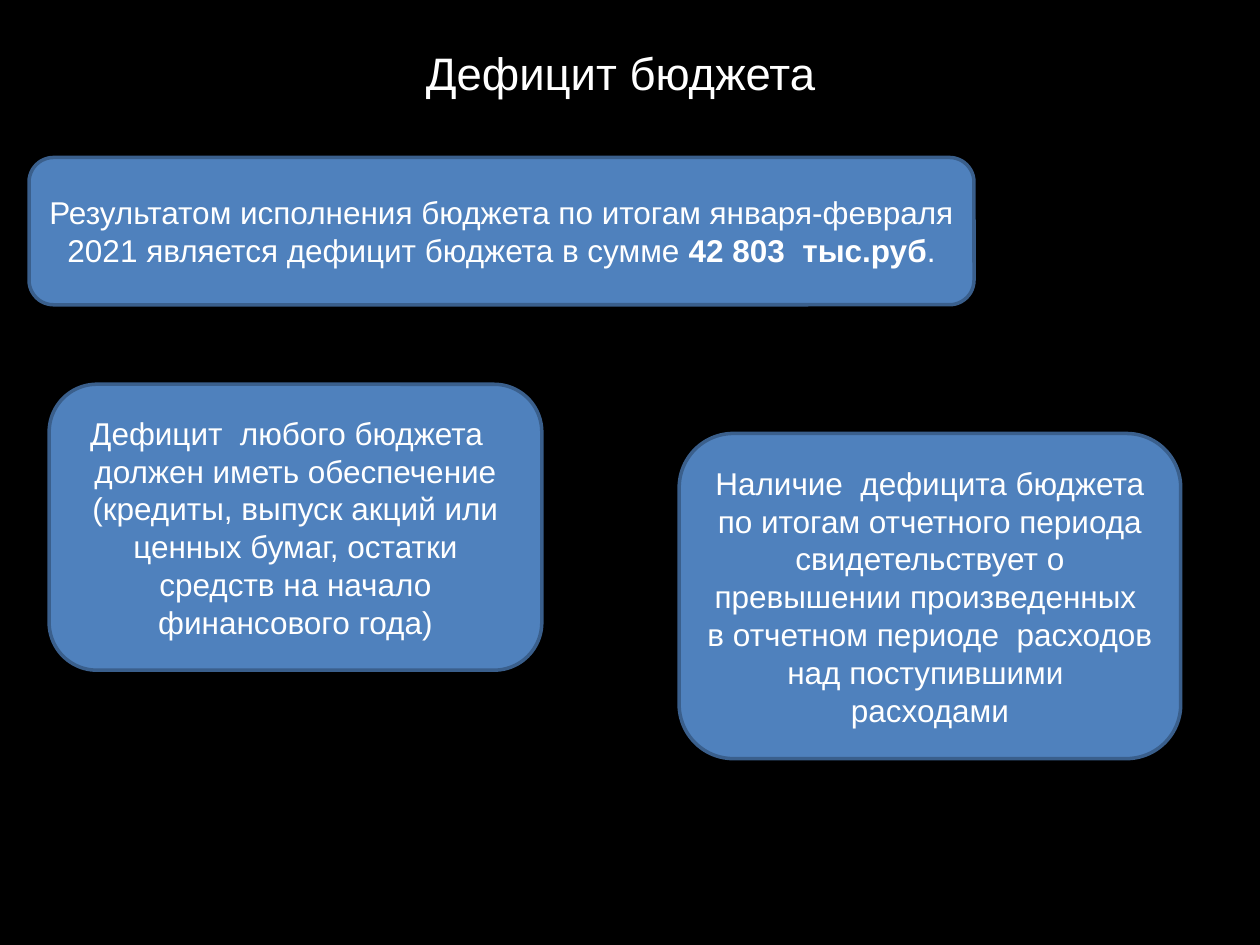
import pptx
import pptx.dml.color
import pptx.enum.shapes
import pptx.enum.text
import pptx.util

Pt = pptx.util.Pt


def color(value):
    return pptx.dml.color.RGBColor.from_string(value)


def write_spans(para, spans, size):
    """Add (text, bold) spans to a paragraph."""
    for text, bold in spans:
        span = para.add_run()
        span.text = text
        for name, value in {"name": "Arial", "size": Pt(size), "bold": bold}.items():
            setattr(span.font, name, value)
        span.font.color.rgb = color("FFFFFF")


def add_title(page, box, text):
    frame = page.shapes.add_textbox(*map(Pt, box)).text_frame
    frame.word_wrap = True
    frame.auto_size = pptx.enum.text.MSO_AUTO_SIZE.SHAPE_TO_FIT_TEXT
    write_spans(frame.paragraphs[0], [(text, False)], 26)


def add_card(page, box, spans):
    card = page.shapes.add_shape(
        pptx.enum.shapes.MSO_SHAPE.ROUNDED_RECTANGLE, *map(Pt, box))
    card.shadow.inherit = False
    card.fill.solid()
    card.fill.fore_color.rgb = color("4F81BD")
    card.line.color.rgb = color("3A5F8C")
    card.line.width = Pt(2)
    frame = card.text_frame
    frame.word_wrap = True
    frame.vertical_anchor = pptx.enum.text.MSO_ANCHOR.MIDDLE
    para = frame.paragraphs[0]
    para.alignment = pptx.enum.text.PP_ALIGN.CENTER
    write_spans(para, spans, 18)


def build_deficit_page(page):
    page.background.fill.solid()
    page.background.fill.fore_color.rgb = color("000000")
    add_title(page, (236.2, 22.3, 281.5, 38.9), "Дефицит бюджета")
    cards = [
        ((16.6, 90, 540, 84.2), [
            ("Результатом исполнения бюджета по итогам января-февраля 2021 "
             "является дефицит бюджета в сумме ", False),
            ("42 803  тыс.руб", True),
            (".", False)]),
        ((388.1, 247.7, 286.6, 185.8), [
            ("Наличие  дефицита бюджета по итогам отчетного периода "
             "свидетельствует о превышении произведенных  в отчетном периоде  "
             "расходов над поступившими  расходами", False)]),
        ((28.1, 219.6, 281.5, 163.4), [
            ("Дефицит  любого бюджета   должен иметь обеспечение (кредиты, "
             "выпуск акций или ценных бумаг, остатки средств на начало "
             "финансового года)", False)]),
    ]
    for box, spans in cards:
        add_card(page, box, spans)


def main():
    deck = pptx.Presentation()
    deck.slide_width, deck.slide_height = Pt(720), Pt(540)
    build_deficit_page(deck.slides.add_slide(deck.slide_layouts[6]))
    deck.save("out.pptx")


if __name__ == "__main__":
    main()
